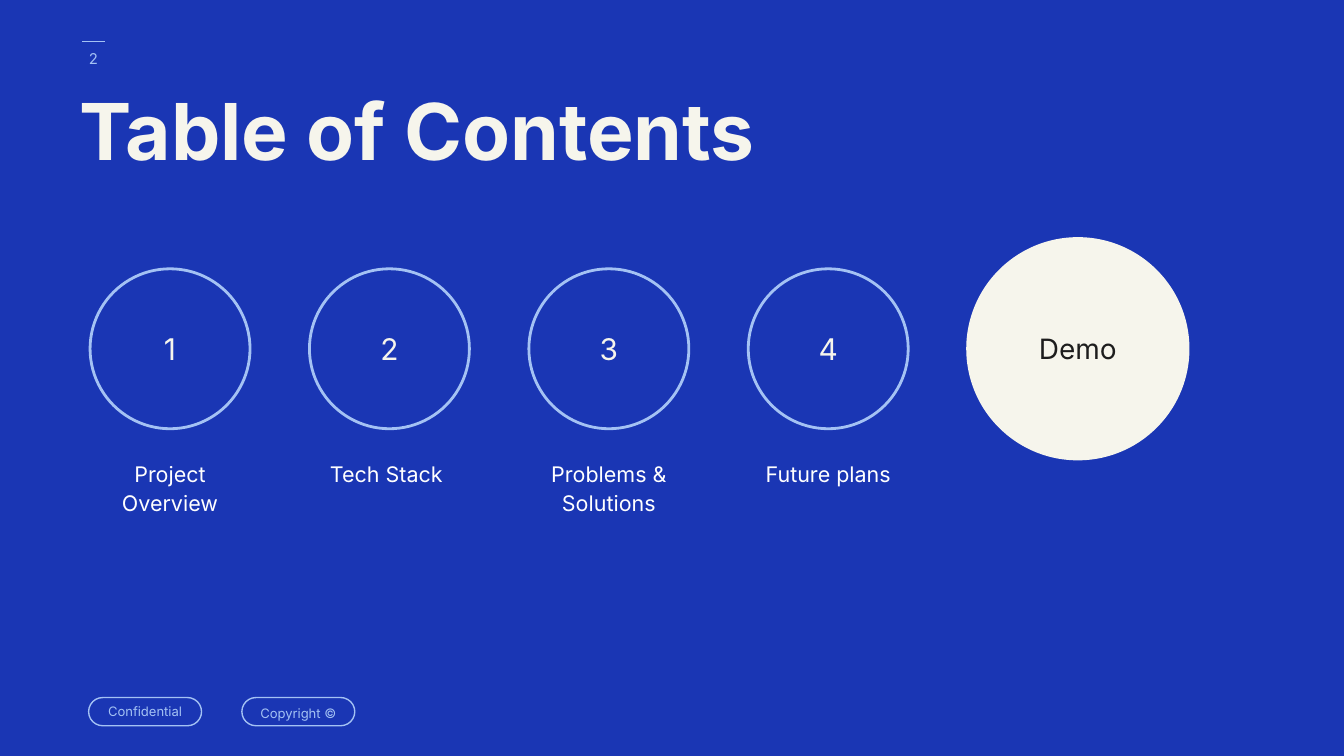
"""Build a table of contents slide with numbered circles and a demo circle."""
from lxml.etree import SubElement
from pptx import Presentation
from pptx.dml.color import RGBColor
from pptx.enum.shapes import MSO_CONNECTOR, MSO_SHAPE as Shape
from pptx.enum.text import MSO_ANCHOR as Anchor, MSO_AUTO_SIZE as AutoSize, PP_ALIGN as Align
from pptx.oxml.ns import qn
from pptx.util import Inches, Pt

TITLE = "Table of Contents"
PAGE = "2"
TOPICS = [("Project Overview", 0.97, 0.62), ("Tech Stack ", 1.19, 0.4),
          ("Problems & Solutions", 1.19, 0.62), ("Future plans", 1.19, 0.4)]
FINALE = "Demo"
NOTICES = [("Confidential", 1), ("Copyright ©", 1.15)]

BLUE, SKY, CREAM, INK, WHITE = "1A36B4", "A4C2F4", "F6F5EC", "1D1D1D", "FFFFFF"
FONT = "Inter"
WIDTH = 10
HEIGHT = WIDTH * 9 / 16
LEFT, CIRCLE, CIRCLE_TOP = 0.67, 1.19, 2
FINALE_LEFT, FINALE_SIZE = 7.2, 1.64
STEP = (FINALE_LEFT - LEFT) / len(TOPICS)
FINALE_TOP = CIRCLE_TOP + (CIRCLE - FINALE_SIZE) / 2
NOTICE_LEFT, NOTICE_STEP = 0.66, 1.14


def color(value):
    return RGBColor.from_string(value)


def write(holder, text, size, ink, align=Align.CENTER, anchor=Anchor.MIDDLE,
          spacing=1, bold=False, fit=AutoSize.NONE):
    frame = holder.text_frame
    frame.word_wrap = True
    frame.auto_size = fit
    frame.vertical_anchor = anchor
    frame.margin_left = frame.margin_right = Inches(0.1)
    frame.margin_top = frame.margin_bottom = Inches(0.1)
    paragraph = frame.paragraphs[0]
    paragraph.text = text
    paragraph.alignment = align
    paragraph.line_spacing = spacing
    font = paragraph.font
    font.name, font.size, font.bold = FONT, Pt(size), bold
    font.color.rgb = color(ink)


def add_label(slide, box, text, size, ink, **style):
    label = slide.shapes.add_textbox(*map(Inches, box))
    write(label, text, size, ink, **style)


def add_badge(slide, kind, box, text, size, ink, line, weight, fill=None, **style):
    badge = slide.shapes.add_shape(kind, *map(Inches, box))
    badge.shadow.inherit = False
    if fill:
        badge.fill.solid()
        badge.fill.fore_color.rgb = color(fill)
    else:
        badge.fill.background()
    badge.line.color.rgb = color(line)
    badge.line.width = Pt(weight)
    write(badge, text, size, ink, **style)
    return badge


def add_rule(slide, start, end, y):
    rule = slide.shapes.add_connector(
        MSO_CONNECTOR.STRAIGHT, *map(Inches, (start, y, end, y)))
    rule.line.color.rgb = color(SKY)
    rule.line.width = Pt(0.75)
    SubElement(rule._element.spPr, qn("a:effectLst"))


def main():
    deck = Presentation()
    deck.slide_width, deck.slide_height = Inches(WIDTH), Inches(HEIGHT)
    slide = deck.slides.add_slide(deck.slide_layouts[6])
    slide.background.fill.solid()
    slide.background.fill.fore_color.rgb = color(BLUE)

    add_rule(slide, 0.78, 0.61, 0.31)
    for column, (notice, spacing) in enumerate(NOTICES):
        box = (NOTICE_LEFT + column * NOTICE_STEP, 5.19, 0.84, 0.21)
        pill = add_badge(slide, Shape.ROUNDED_RECTANGLE, box, notice, 7, SKY,
                         SKY, 0.75, spacing=spacing)
        pill.adjustments[0] = 0.5

    add_label(slide, (0.49, 0.65, 6.7, 1.57), TITLE, 42, CREAM, align=Align.LEFT,
              anchor=Anchor.TOP, spacing=0.8, bold=True)
    add_badge(slide, Shape.FLOWCHART_CONNECTOR,
              (FINALE_LEFT, FINALE_TOP, FINALE_SIZE, FINALE_SIZE),
              FINALE, 15, INK, CREAM, 1.5, fill=CREAM)

    for column, (topic, width, height) in enumerate(TOPICS):
        x = LEFT + column * STEP
        add_badge(slide, Shape.FLOWCHART_CONNECTOR, (x, CIRCLE_TOP, CIRCLE, CIRCLE),
                  str(column + 1), 16, CREAM, SKY, 1.5)
        add_label(slide, (x + (CIRCLE - width) / 2, 3.3, width, height), topic, 11.5,
                  WHITE, anchor=Anchor.TOP, spacing=1.15, fit=AutoSize.SHAPE_TO_FIT_TEXT)

    add_label(slide, (0.46, 0.22, 0.47, 0.43), PAGE, 8, SKY)
    deck.save("out.pptx")


if __name__ == "__main__":
    main()
